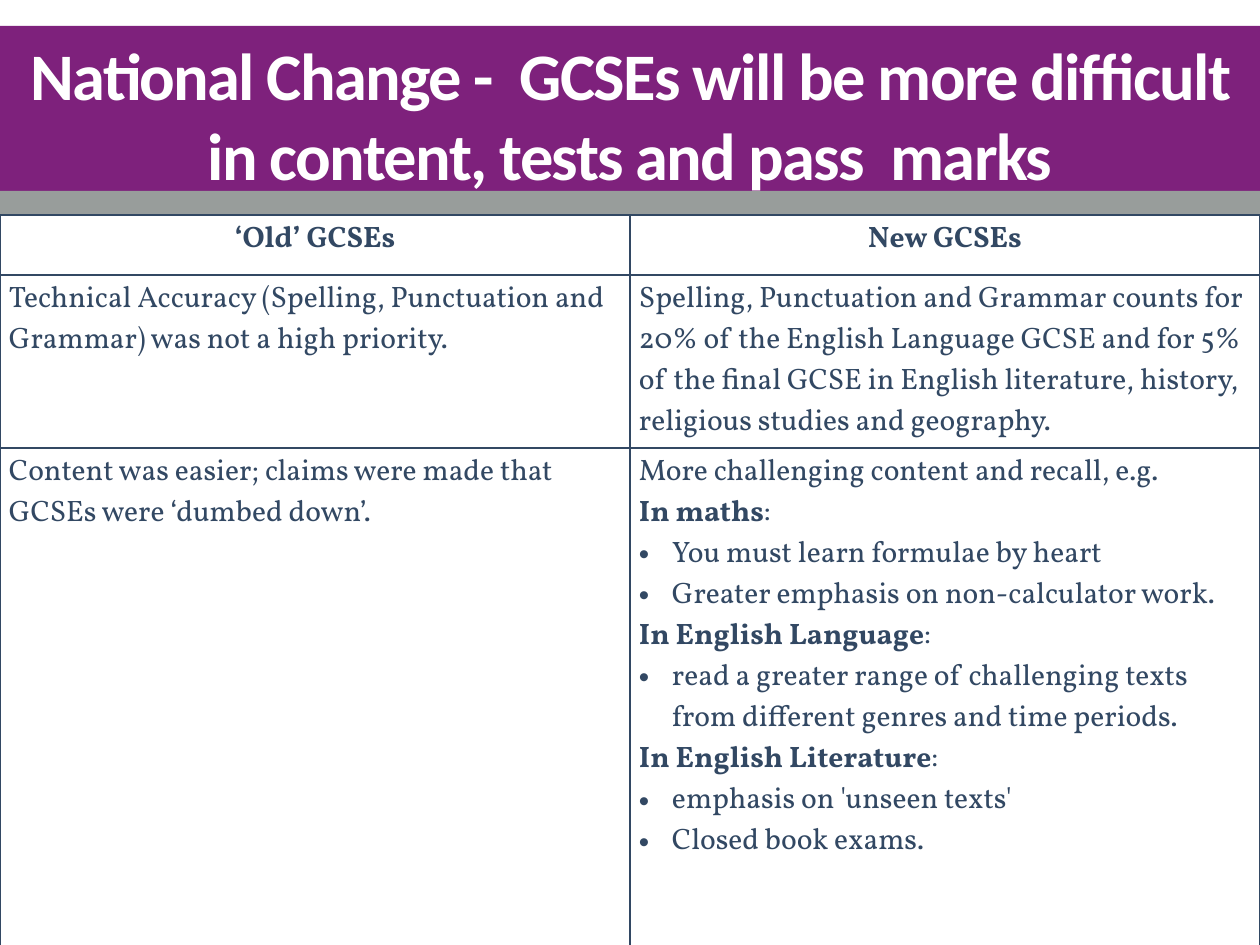
from lxml import etree
from pptx import Presentation
from pptx.dml.color import RGBColor
from pptx.enum.shapes import MSO_SHAPE
from pptx.enum.text import MSO_ANCHOR, PP_ALIGN
from pptx.oxml.ns import qn
from pptx.util import Pt

RECTANGLE = MSO_SHAPE.RECTANGLE
TOP, BOTTOM = MSO_ANCHOR.TOP, MSO_ANCHOR.BOTTOM
LEFT, CENTER = PP_ALIGN.LEFT, PP_ALIGN.CENTER

PX = 10320
WIDTH, HEIGHT = 1260, 945
PURPLE, GREY, NAVY, WHITE = "7E217C", "989D9B", "324863", "FFFFFF"

TITLE = "National Change -  GCSEs will be more difficult in content, tests and pass  marks"
BANDS = [(26, 165, PURPLE), (191, 24, GREY)]
TABLE_TOP = 215
ROW_HEIGHTS = [60, 173, 498]
ROWS = [
    (
        [("heading", "‘Old’ GCSEs")],
        [("heading", "New GCSEs")],
    ),
    (
        [("plain", "Technical Accuracy (Spelling, Punctuation and Grammar) was not a high priority.")],
        [("plain", "Spelling, Punctuation and Grammar counts for 20% of the English Language GCSE "
                   "and for 5% of the final GCSE in English literature, history, religious studies "
                   "and geography.")],
    ),
    (
        [("plain", "Content was easier; claims were made that GCSEs were ‘dumbed down’.")],
        [
            ("plain", "More challenging content and recall, e.g."),
            ("subject", "In maths"),
            ("bullet", "You must learn formulae by heart"),
            ("bullet", "Greater emphasis on non-calculator work."),
            ("subject", "In English Language"),
            ("bullet", "read a greater range of challenging texts from different genres and time periods."),
            ("subject", "In English Literature"),
            ("bullet", "emphasis on 'unseen texts'"),
            ("bullet", "Closed book exams."),
        ],
    ),
]


def px(length):
    return length * PX


def color(value):
    return RGBColor.from_string(value)


def add_text(para, text, font="Vollkorn", size=24, fill=NAVY, bold=False, spacing=None):
    span = para.add_run()
    span.text = text
    span.font.name = font
    span.font.size = Pt(size)
    span.font.bold = bold
    span.font.color.rgb = color(fill)
    if spacing is not None:
        span._r.get_or_add_rPr().set("spc", str(spacing))


def add_bullet(para):
    properties = para._p.get_or_add_pPr()
    properties.set("marL", str(px(33)))
    properties.set("indent", str(px(-33)))
    etree.SubElement(properties, qn("a:buFont")).set("typeface", "Arial")
    etree.SubElement(properties, qn("a:buChar")).set("char", "•")


def add_borders(cell):
    properties = cell._tc.get_or_add_tcPr()
    for index, side in enumerate(("a:lnL", "a:lnR", "a:lnT", "a:lnB")):
        line = etree.Element(qn(side), w=str(Pt(1)))
        fill = etree.SubElement(line, qn("a:solidFill"))
        etree.SubElement(fill, qn("a:srgbClr")).set("val", NAVY)
        properties.insert(index, line)


def fill_cell(cell, lines):
    cell.fill.solid()
    cell.fill.fore_color.rgb = color(WHITE)
    cell.vertical_anchor = TOP
    cell.margin_left = cell.margin_right = px(9)
    cell.margin_top = cell.margin_bottom = px(4)
    add_borders(cell)
    frame = cell.text_frame
    for index, (style, text) in enumerate(lines):
        para = frame.add_paragraph() if index else frame.paragraphs[0]
        para.alignment = CENTER if style == "heading" else LEFT
        if style == "bullet":
            add_bullet(para)
        add_text(para, text, bold=style in ("heading", "subject"))
        if style == "subject":
            add_text(para, ":")


def add_band(page, top, height, fill):
    band = page.shapes.add_shape(RECTANGLE, 0, px(top), px(WIDTH), px(height))
    band.shadow.inherit = False
    band.fill.solid()
    band.fill.fore_color.rgb = color(fill)
    band.line.fill.background()


def add_title(page):
    box = page.shapes.add_textbox(0, px(34), px(WIDTH), px(160))
    frame = box.text_frame
    frame.word_wrap = True
    frame.vertical_anchor = BOTTOM
    frame.margin_left = frame.margin_right = frame.margin_top = frame.margin_bottom = 0
    para = frame.paragraphs[0]
    para.alignment = CENTER
    add_text(para, TITLE, font="Calibri", size=54, fill=WHITE, bold=True, spacing=-130)


def add_comparison(page):
    columns = len(ROWS[0])
    table = page.shapes.add_table(
        len(ROWS), columns, 0, px(TABLE_TOP), px(WIDTH), px(sum(ROW_HEIGHTS))
    ).table
    table.first_row = table.horz_banding = False
    for column in table.columns:
        column.width = px(WIDTH // columns)
    for row, height, contents in zip(table.rows, ROW_HEIGHTS, ROWS):
        row.height = px(height)
        for cell, lines in zip(row.cells, contents):
            fill_cell(cell, lines)


def main():
    deck = Presentation()
    deck.slide_width, deck.slide_height = px(WIDTH), px(HEIGHT)
    page = deck.slides.add_slide(deck.slide_layouts[6])
    for top, height, fill in BANDS:
        add_band(page, top, height, fill)
    add_title(page)
    add_comparison(page)
    deck.save("out.pptx")


if __name__ == "__main__":
    main()
